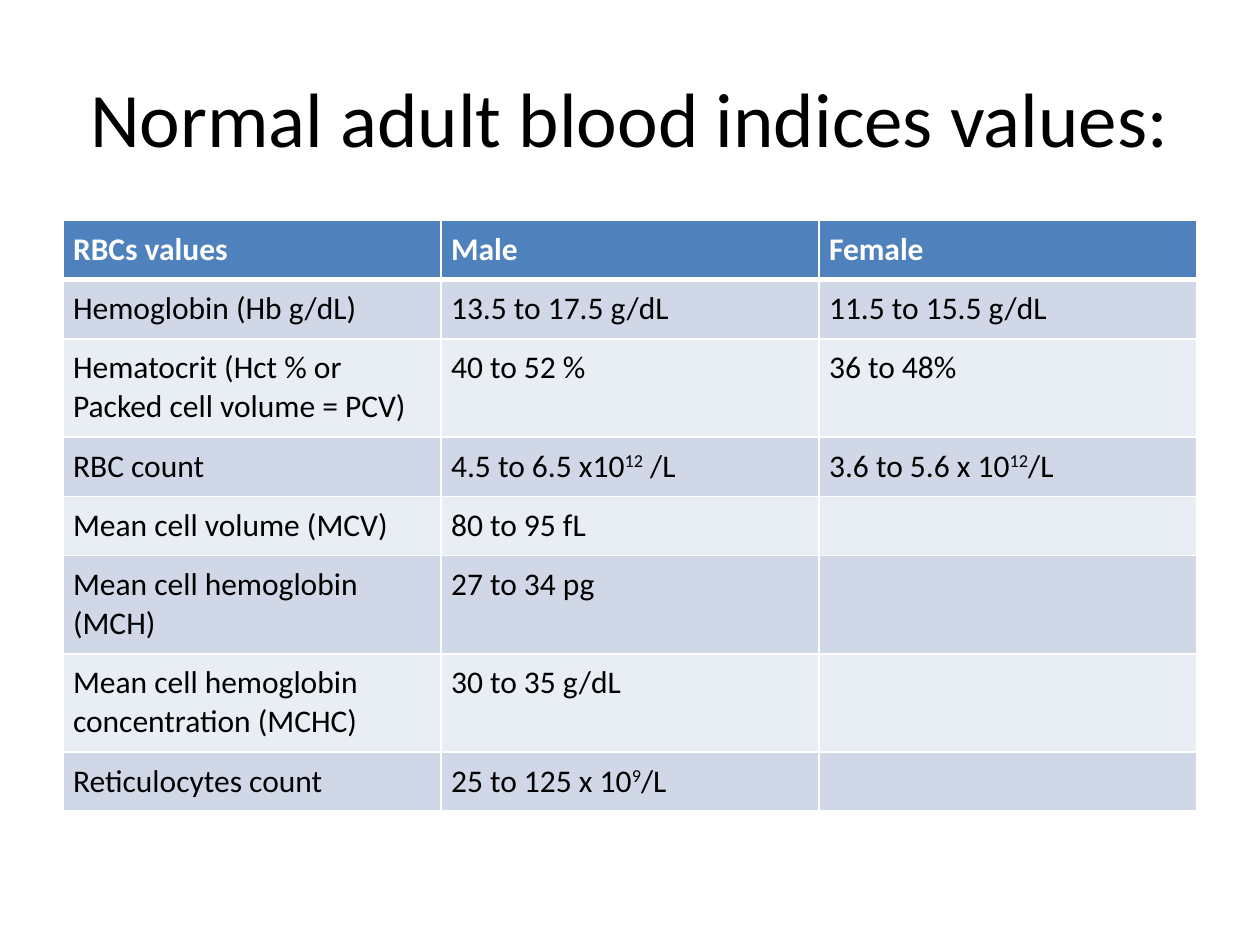
from lxml.etree import SubElement
from pptx import Presentation
from pptx.dml.color import RGBColor
from pptx.enum.text import MSO_ANCHOR, PP_ALIGN
from pptx.oxml.ns import qn
from pptx.util import Inches, Pt

BLACK = RGBColor(0x00, 0x00, 0x00)
WHITE = RGBColor(0xFF, 0xFF, 0xFF)
HEADER_BLUE = RGBColor(0x4F, 0x81, 0xBD)
BAND_DARK = RGBColor(0xD0, 0xD8, 0xE8)
BAND_LIGHT = RGBColor(0xE9, 0xED, 0xF4)

ONE_LINE, TWO_LINES = 0.47, 0.78

# Text between carets is superscript.
BLOOD_INDICES = [
    (ONE_LINE, "RBCs values", "Male", "Female"),
    (ONE_LINE, "Hemoglobin (Hb g/dL)", "13.5 to 17.5 g/dL", "11.5 to 15.5 g/dL"),
    (TWO_LINES, "Hematocrit (Hct % or Packed cell volume = PCV)", "40 to 52 %", "36 to 48%"),
    (ONE_LINE, "RBC count", "4.5 to 6.5 x10^12^ /L", "3.6 to 5.6 x 10^12^/L"),
    (ONE_LINE, "Mean cell volume (MCV)", "80 to 95 fL", ""),
    (TWO_LINES, "Mean cell hemoglobin (MCH)", "27 to 34 pg", ""),
    (TWO_LINES, "Mean cell hemoglobin concentration (MCHC)", "30 to 35 g/dL", ""),
    (ONE_LINE, "Reticulocytes count", "25 to 125 x 10^9^/L", ""),
]


class SlideBuilder:
    font_name = "Calibri"
    title_size = Pt(44)
    cell_size = Pt(18)
    cell_margin = Inches(0.08)

    def __init__(self, slide):
        self.slide = slide

    def add_run(self, paragraph, text, size, color, bold=False):
        run = paragraph.add_run()
        run.text = text
        run.font.name = self.font_name
        run.font.size = size
        run.font.bold = bold
        run.font.color.rgb = color
        return run

    def title(self, text, left, top, width, height):
        heading = self.slide.shapes.title
        heading.left, heading.top = Inches(left), Inches(top)
        heading.width, heading.height = Inches(width), Inches(height)
        heading.text_frame.vertical_anchor = MSO_ANCHOR.MIDDLE
        paragraph = heading.text_frame.paragraphs[0]
        paragraph.alignment = PP_ALIGN.CENTER
        self.add_run(paragraph, text, self.title_size, BLACK)

    def table(self, rows, left, top, width):
        height = sum(row[0] for row in rows)
        indices = self.slide.shapes.add_table(
            len(rows), len(rows[0]) - 1,
            Inches(left), Inches(top), Inches(width), Inches(height)).table
        for row_no, (row_height, *texts) in enumerate(rows):
            indices.rows[row_no].height = Inches(row_height)
            for col_no, text in enumerate(texts):
                self.cell(indices.cell(row_no, col_no), text, row_no)

    def cell(self, cell, text, row_no):
        is_header = row_no == 0
        cell.margin_left = cell.margin_right = self.cell_margin
        cell.margin_top = cell.margin_bottom = self.cell_margin
        self.borders(cell, top=3 if row_no == 1 else 1, bottom=3 if is_header else 1)
        cell.fill.solid()
        bands = (BAND_LIGHT, BAND_DARK)
        cell.fill.fore_color.rgb = HEADER_BLUE if is_header else bands[row_no % 2]

        paragraph = cell.text_frame.paragraphs[0]
        paragraph.font.size = self.cell_size
        for part_no, part in enumerate(text.split("^")):
            if not part:
                continue
            run = self.add_run(paragraph, part, self.cell_size,
                               WHITE if is_header else BLACK, is_header)
            if part_no % 2:
                run.font._element.set("baseline", "30000")

    def borders(self, cell, top, bottom):
        """Add white cell borders; the fill has to be set afterwards."""
        properties = cell._tc.get_or_add_tcPr()
        for side, points in (("L", 1), ("R", 1), ("T", top), ("B", bottom)):
            line = SubElement(properties, qn(f"a:ln{side}"), w=str(Pt(points)))
            fill = SubElement(line, qn("a:solidFill"))
            SubElement(fill, qn("a:srgbClr"), val=str(WHITE))


def main():
    presentation = Presentation()
    presentation.slide_width, presentation.slide_height = Inches(10), Inches(7.5)
    title_only = presentation.slide_layouts[5]
    builder = SlideBuilder(presentation.slides.add_slide(title_only))
    builder.title("Normal adult blood indices values:", 0.5, 0.3, 9, 1.25)
    builder.table(BLOOD_INDICES, 0.5, 1.75, 9)
    presentation.save("out.pptx")


if __name__ == "__main__":
    main()
